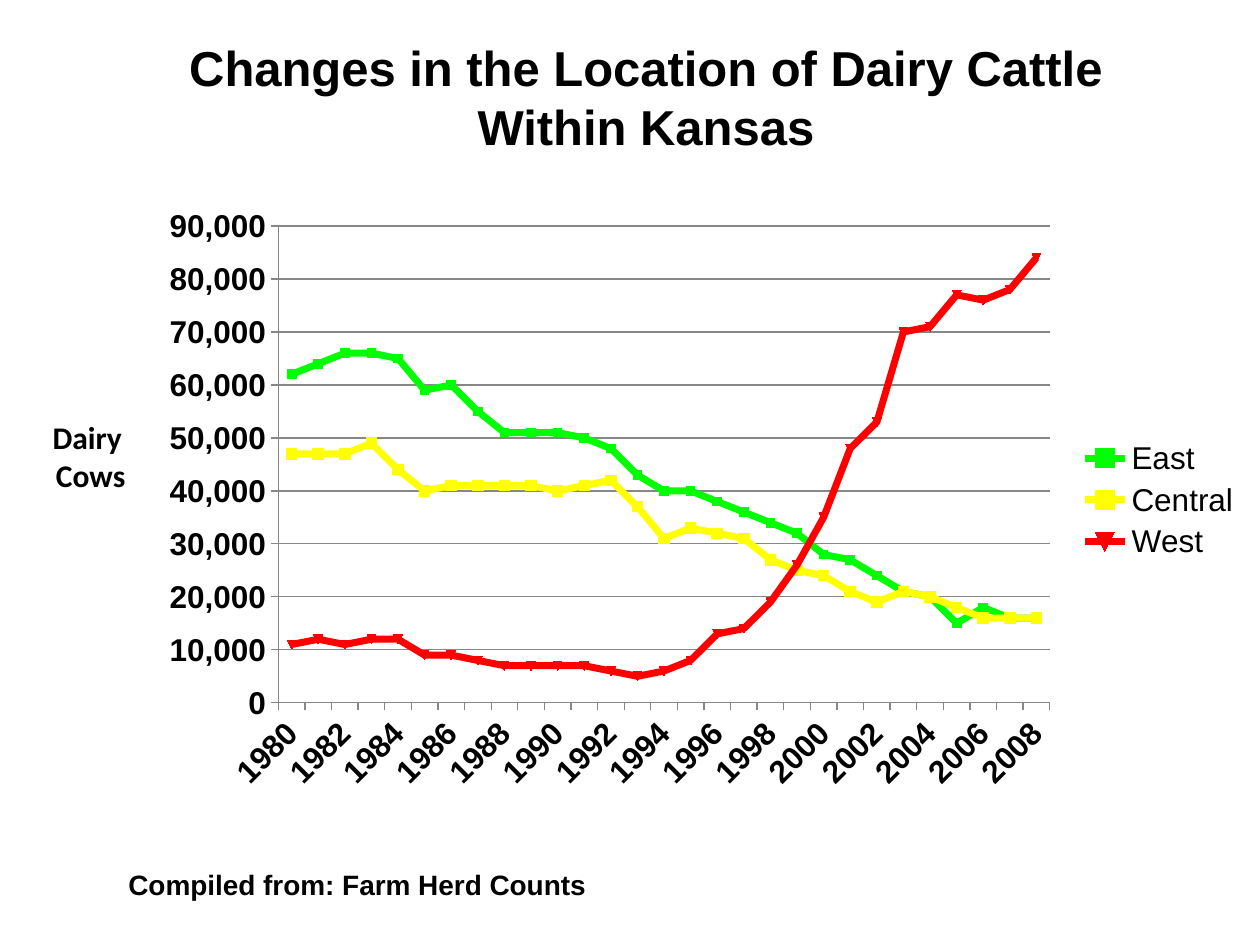
from dataclasses import dataclass

from lxml.etree import SubElement
from pptx import Presentation
from pptx.chart.data import CategoryChartData
from pptx.dml.color import RGBColor
from pptx.enum.chart import XL_CHART_TYPE, XL_LEGEND_POSITION, XL_MARKER_STYLE, XL_TICK_MARK
from pptx.enum.text import MSO_AUTO_SIZE, PP_ALIGN
from pptx.oxml.ns import qn
from pptx.util import Emu, Pt

SCALE = 914400 / 126


def px(n: int) -> Emu:
    return Emu(round(n * SCALE))


@dataclass(frozen=True)
class Theme:
    font: str = "Arial"
    axis_title_font: str = "Calibri"
    ink: str = "000000"
    rule: str = "878787"
    east: str = "00FF00"
    central: str = "FFFF00"
    west: str = "FF0000"
    title_size: int = 28
    chart_size: int = 18
    source_size: int = 16
    line_width: int = 4


@dataclass(frozen=True)
class Box:
    x: int
    y: int
    w: int
    h: int


@dataclass(frozen=True)
class Label:
    text: str
    box: Box
    size: int
    align: PP_ALIGN


@dataclass(frozen=True)
class Region:
    name: str
    color: str
    marker: XL_MARKER_STYLE
    marker_size: int
    thousands: tuple[int, ...]


THEME = Theme()
CHART_BOX = Box(39, 197, 1215, 606)
PLOT_BOX = Box(278, 226, 771, 477)
AXIS_TITLE_AT = (49, 413)
YEARS = range(1980, 2009)

LABELS = [
    Label("Changes in the Location of Dairy Cattle Within Kansas",
          Box(147, 31, 998, 131), THEME.title_size, PP_ALIGN.CENTER),
    Label("Compiled from: Farm Herd Counts",
          Box(116, 861, 536, 47), THEME.source_size, PP_ALIGN.LEFT),
]

REGIONS = [
    Region("East", THEME.east, XL_MARKER_STYLE.AUTOMATIC, 5,
           (62, 64, 66, 66, 65, 59, 60, 55, 51, 51, 51, 50, 48, 43, 40,
            40, 38, 36, 34, 32, 28, 27, 24, 21, 20, 15, 18, 16, 16)),
    Region("Central", THEME.central, XL_MARKER_STYLE.SQUARE, 6,
           (47, 47, 47, 49, 44, 40, 41, 41, 41, 41, 40, 41, 42, 37, 31,
            33, 32, 31, 27, 25, 24, 21, 19, 21, 20, 18, 16, 16, 16)),
    Region("West", THEME.west, XL_MARKER_STYLE.AUTOMATIC, 5,
           (11, 12, 11, 12, 12, 9, 9, 8, 7, 7, 7, 7, 6, 5, 6,
            8, 13, 14, 19, 26, 35, 48, 53, 70, 71, 77, 76, 78, 84)),
]


def set_all(obj, values: dict) -> None:
    for name, value in values.items():
        setattr(obj, name, value)


def style_font(font, size: int, bold: bool, name: str = THEME.font) -> None:
    set_all(font, {"name": name, "size": Pt(size), "bold": bold})
    font.color.rgb = RGBColor.from_string(THEME.ink)


def add_label(s, label: Label) -> None:
    b = label.box
    tf = s.shapes.add_textbox(px(b.x), px(b.y), px(b.w), px(b.h)).text_frame
    set_all(tf, {"word_wrap": True, "auto_size": MSO_AUTO_SIZE.SHAPE_TO_FIT_TEXT})
    p = tf.paragraphs[0]
    p.alignment = label.align
    r = p.add_run()
    r.text = label.text
    style_font(r.font, label.size, True)


def place(layout, values: dict) -> None:
    """Fill a chart layout element with manual settings."""
    for child in list(layout):
        layout.remove(child)
    manual = SubElement(layout, qn("c:manualLayout"))
    for tag, value in values.items():
        SubElement(manual, qn(f"c:{tag}")).set("val", str(value))


def get_layout(parent, index: int):
    layout = parent.find(qn("c:layout"))
    if layout is None:
        layout = SubElement(parent, qn("c:layout"))
        parent.insert(index, layout)
    return layout


def fraction(x: int, y: int) -> dict:
    return {"xMode": "edge", "yMode": "edge",
            "x": round((x - CHART_BOX.x) / CHART_BOX.w, 3),
            "y": round((y - CHART_BOX.y) / CHART_BOX.h, 3)}


def style_axes(chart) -> None:
    cat, val = chart.category_axis, chart.value_axis
    for axis in (cat, val):
        set_all(axis, {"major_tick_mark": XL_TICK_MARK.OUTSIDE,
                       "minor_tick_mark": XL_TICK_MARK.NONE})
        style_font(axis.tick_labels.font, THEME.chart_size, True)
        axis.format.line.color.rgb = RGBColor.from_string(THEME.rule)
    set_all(val, {"minimum_scale": 0, "maximum_scale": 90000,
                  "major_unit": 10000, "has_major_gridlines": True})
    val.major_gridlines.format.line.color.rgb = RGBColor.from_string(THEME.rule)
    set_all(val.tick_labels, {"number_format": "#,##0", "number_format_is_linked": False})

    # Slanted year labels, every second year
    cat_xml = cat._element
    cat_xml.find(qn("c:txPr")).find(qn("a:bodyPr")).set("rot", "-2700000")
    skip = SubElement(cat_xml, qn("c:tickLblSkip"))
    skip.set("val", "2")
    cat_xml.find(qn("c:noMultiLvlLbl")).addprevious(skip)

    # Upright value axis title
    tf = val.axis_title.text_frame
    tf.text = "Dairy \nCows"
    for p in tf.paragraphs:
        for r in p.runs:
            style_font(r.font, THEME.chart_size, True, THEME.axis_title_font)
    title = val.axis_title._element
    title.find(".//" + qn("a:bodyPr")).attrib.update({"rot": "0", "vert": "horz"})
    place(get_layout(title, 1), fraction(*AXIS_TITLE_AT))


def add_cattle_chart(s) -> None:
    data = CategoryChartData(number_format="#,##0")
    data.categories = [str(year) for year in YEARS]
    for region in REGIONS:
        data.add_series(region.name, [n * 1000 for n in region.thousands])
    b = CHART_BOX
    chart = s.shapes.add_chart(XL_CHART_TYPE.LINE_MARKERS, px(b.x), px(b.y),
                               px(b.w), px(b.h), data).chart
    style_font(chart.font, THEME.chart_size, False)
    set_all(chart, {"has_title": False, "has_legend": True})
    set_all(chart.legend, {"position": XL_LEGEND_POSITION.RIGHT, "include_in_layout": False})
    plot = chart.plots[0]
    plot.vary_by_categories = False

    # Regional lines
    for series, region in zip(plot.series, REGIONS):
        color = RGBColor.from_string(region.color)
        series.smooth = False
        series.format.line.width = Pt(THEME.line_width)
        series.format.line.color.rgb = color
        marker = series.marker
        set_all(marker, {"style": region.marker, "size": region.marker_size})
        marker.format.fill.solid()
        marker.format.fill.fore_color.rgb = color
        marker.format.line.color.rgb = color

    # Axes and plot area
    style_axes(chart)
    area = chart._chartSpace.find(".//" + qn("c:plotArea"))
    place(get_layout(area, 0), {"layoutTarget": "inner",
                                **fraction(PLOT_BOX.x, PLOT_BOX.y),
                                "w": round(PLOT_BOX.w / b.w, 3),
                                "h": round(PLOT_BOX.h / b.h, 3)})


def main() -> None:
    prs = Presentation()
    set_all(prs, {"slide_width": px(1260), "slide_height": px(945)})
    s = prs.slides.add_slide(prs.slide_layouts[6])
    add_cattle_chart(s)
    for label in LABELS:
        add_label(s, label)
    prs.save("out.pptx")


if __name__ == "__main__":
    main()
